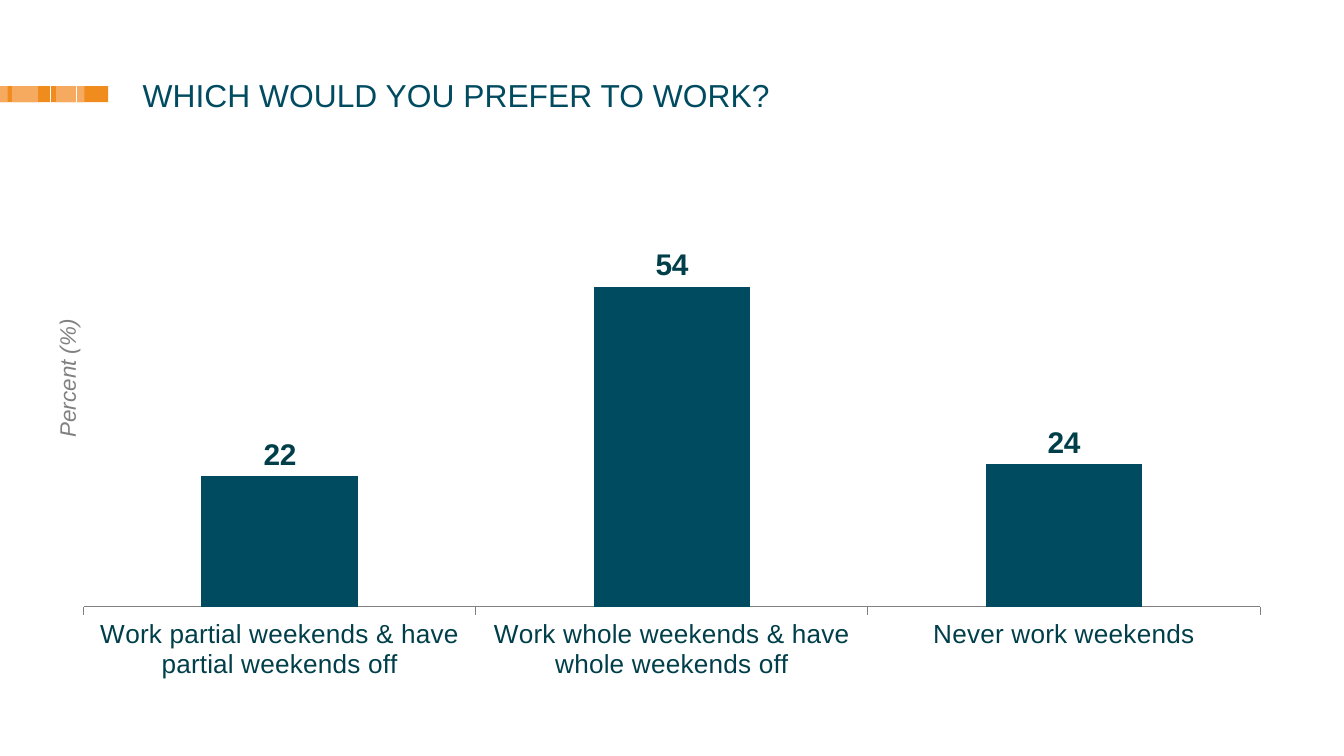
from pptx import Presentation, oxml
from pptx import util as u
from pptx.chart import data
from pptx.dml import color
from pptx.enum import chart as ch, shapes, text
from pptx.oxml import ns
from lxml import etree

WIDE = 10
HIGH = WIDE * 9 / 16
CELL = WIDE / 100
FONT = "Arial"
TEAL, DARK, GRAY = "004B60", "003F4A", "808080"
DEEP, PALE, WHITE = "F08B1D", "F6AA5F", "FFFFFF"


def rgb(code):
    return color.RGBColor.from_string(code)


def grid(*cells):
    return [u.Inches(cell * CELL) for cell in cells]


def style(font, size, code, bold=False, italic=False):
    font.name, font.size = FONT, u.Pt(size)
    font.bold, font.italic = bold, italic
    font.color.rgb = rgb(code)


def write(slide, box, words, size, code, italic=False, align="LEFT", turn=None):
    shape = slide.shapes.add_textbox(*grid(*box))
    frame = shape.text_frame
    frame.word_wrap = True
    frame.margin_left = frame.margin_top = 0
    frame.margin_right = frame.margin_bottom = 0
    if turn:
        shape.element.xpath(".//a:bodyPr")[0].set("vert", turn)
    para = frame.paragraphs[0]
    para.alignment = getattr(text.PP_ALIGN, align)
    para.line_spacing = 0.85
    para.space_after = u.Pt(12)
    run = para.add_run()
    run.text = words
    style(run.font, size, code, italic=italic)


def band(slide, box):
    left, top, wide, high = box
    parts = [(0, 1, DEEP), (0.52, 0.26, PALE), (0.11, 0.24, PALE), (0, 0.07, PALE)]
    for start, share, code in parts:
        place = grid(left + start * wide, top, share * wide, high)
        bar = slide.shapes.add_shape(shapes.MSO_SHAPE.RECTANGLE, *place)
        bar.shadow.inherit = False
        bar.fill.solid()
        bar.fill.fore_color.rgb = rgb(code)
        bar.line.fill.background()
    for start in (0.47, 0.71):
        mid = left + start * wide
        ends = grid(mid, top, mid, top + high)
        line = slide.shapes.add_connector(shapes.MSO_CONNECTOR.STRAIGHT, *ends)
        line.line.color.rgb = rgb(WHITE)
        line.line.width = u.Pt(0.63)
        etree.SubElement(line.element.spPr, ns.qn("a:effectLst"))


def fix(chart, x, y, w, h):
    area = chart.element.xpath("c:chart/c:plotArea")[0]
    for old in area.xpath("c:layout"):
        area.remove(old)
    area.insert(0, oxml.parse_xml(
        f'<c:layout {ns.nsdecls("c")}><c:manualLayout>'
        '<c:layoutTarget val="inner"/><c:xMode val="edge"/><c:yMode val="edge"/>'
        f'<c:x val="{x}"/><c:y val="{y}"/><c:w val="{w}"/><c:h val="{h}"/>'
        '</c:manualLayout></c:layout>'))


def graph(slide, box):
    table = data.CategoryChartData()
    table.categories = [
        "Work partial weekends & have partial weekends off",
        "Work whole weekends & have whole weekends off",
        "Never work weekends",
    ]
    table.add_series("Series 1", (22, 54, 24))
    kind = ch.XL_CHART_TYPE.COLUMN_CLUSTERED
    chart = slide.shapes.add_chart(kind, *grid(*box), table).chart
    chart.has_legend = chart.has_title = False
    style(chart.font, 14, DARK)
    base = chart.category_axis
    base.major_tick_mark = ch.XL_TICK_MARK.OUTSIDE
    base.format.line.color.rgb = rgb(GRAY)
    base.format.line.width = u.Pt(0.5)
    scale = chart.value_axis
    scale.minimum_scale, scale.maximum_scale, scale.major_unit = 0, 80, 40
    scale.has_major_gridlines = False
    scale.tick_labels.number_format = "0"
    scale.tick_labels.number_format_is_linked = False
    scale.visible = False
    plot = chart.plots[0]
    plot.gap_width = 150
    plot.vary_by_categories = False
    fill = plot.series[0].format.fill
    fill.solid()
    fill.fore_color.rgb = rgb(TEAL)
    plot.has_data_labels = True
    labels = plot.data_labels
    labels.show_value = True
    labels.number_format, labels.number_format_is_linked = "0", False
    labels.position = ch.XL_LABEL_POSITION.OUTSIDE_END
    style(labels.font, 16, DARK, bold=True)
    fix(chart, 0.017, 0.034, 0.966, 0.795)


def main():
    deck = Presentation()
    deck.slide_width, deck.slide_height = u.Inches(WIDE), u.Inches(HIGH)
    slide = deck.slides.add_slide(deck.slide_layouts[6])
    band(slide, (0, 6.4, 8.05, 1.2))
    write(slide, (10.62, 6.1, 82.7, 5), "WHICH WOULD YOU PREFER TO WORK?", 17, TEAL)
    graph(slide, (4.7, 8.35, 90.6, 44.4))
    write(slide, (4.28, 22.45, 3.1, 11.4), "Percent (%)", 12, GRAY,
          italic=True, align="CENTER", turn="vert270")
    deck.save("out.pptx")


if __name__ == "__main__":
    main()
